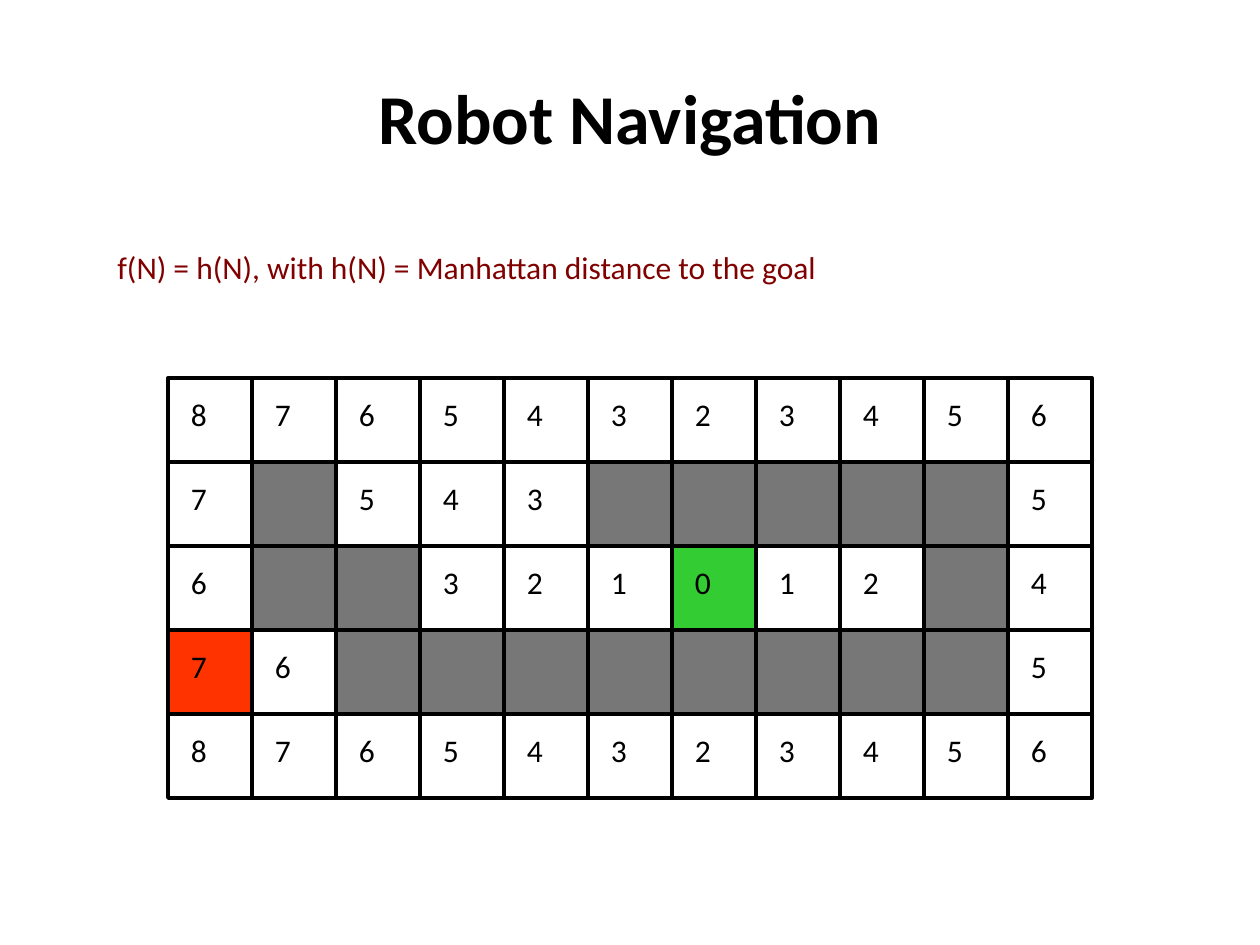
from dataclasses import dataclass

from lxml.etree import SubElement
from pptx import Presentation
from pptx.dml.color import RGBColor as RGB
from pptx.enum.shapes import MSO_CONNECTOR as Connector, MSO_SHAPE as Shape
from pptx.enum.text import MSO_ANCHOR as Anchor, PP_ALIGN as Align
from pptx.oxml.ns import qn
from pptx.util import Pt


@dataclass(frozen=True)
class Theme:
    font: str = "Calibri"
    title_size: int = 40
    body_size: int = 18
    line_width: float = 2.25
    ink: RGB = RGB(0x00, 0x00, 0x00)
    formula: RGB = RGB(0x80, 0x00, 0x00)
    wall: RGB = RGB(0x77, 0x77, 0x77)
    start: RGB = RGB(0xFF, 0x33, 0x00)
    goal: RGB = RGB(0x33, 0xCC, 0x33)


THEME = Theme()

# Map: distance to the goal in each free cell, "#" for a wall
DISTANCES = [
    "87654323456",
    "7#543#####5",
    "6##321012#4",
    "76########5",
    "87654323456",
]
START, GOAL = (3, 0), (2, 6)
ROWS, COLUMNS = len(DISTANCES), len(DISTANCES[0])

# Grid geometry in points
LEFT, TOP, CELL = 96, 216, 48
RIGHT, BOTTOM = LEFT + COLUMNS * CELL, TOP + ROWS * CELL
LABEL_INSET, LABEL_WIDTH, LABEL_HEIGHT = 6, 27, 36


def add_text(shapes, text, left, top, width, height, *, size=THEME.body_size,
             color=THEME.ink, bold=False, align=Align.LEFT, anchor=Anchor.TOP):
    shape = shapes.add_textbox(Pt(left), Pt(top), Pt(width), Pt(height))
    frame = shape.text_frame
    frame.word_wrap = True
    frame.vertical_anchor = anchor
    paragraph = frame.paragraphs[0]
    paragraph.alignment = align
    run = paragraph.add_run()
    run.text = text
    run.font.name = THEME.font
    run.font.size = Pt(size)
    run.font.bold = bold
    run.font.color.rgb = color


def set_line(shape):
    shape.line.color.rgb = THEME.ink
    shape.line.width = Pt(THEME.line_width)


def add_rectangle(shapes, left, top, width, height, fill=None):
    shape = shapes.add_shape(Shape.RECTANGLE, Pt(left), Pt(top), Pt(width), Pt(height))
    shape.shadow.inherit = False
    if fill is None:
        shape.fill.background()
    else:
        shape.fill.solid()
        shape.fill.fore_color.rgb = fill
    set_line(shape)


def add_line(shapes, x1, y1, x2, y2):
    line = shapes.add_connector(Connector.STRAIGHT, Pt(x1), Pt(y1), Pt(x2), Pt(y2))
    set_line(line)
    SubElement(line.element.spPr, qn("a:effectLst"))


def cell_fill(position, value):
    if value == "#":
        return THEME.wall
    return {START: THEME.start, GOAL: THEME.goal}.get(position)


def add_grid(shapes):
    # Frame and inner lines
    add_rectangle(shapes, LEFT, TOP, RIGHT - LEFT, BOTTOM - TOP)
    for column in range(1, COLUMNS):
        x = LEFT + column * CELL
        add_line(shapes, x, TOP, x, BOTTOM)
    for row in range(1, ROWS):
        y = TOP + row * CELL
        add_line(shapes, LEFT, y, RIGHT, y)

    # Coloured cells and distances
    for row, values in enumerate(DISTANCES):
        for column, value in enumerate(values):
            x, y = LEFT + column * CELL, TOP + row * CELL
            fill = cell_fill((row, column), value)
            if fill is not None:
                add_rectangle(shapes, x, y, CELL, CELL, fill)
            if value != "#":
                add_text(shapes, value, x + LABEL_INSET, y + LABEL_INSET,
                         LABEL_WIDTH, LABEL_HEIGHT)


def main():
    presentation = Presentation()
    presentation.slide_width, presentation.slide_height = Pt(720), Pt(540)
    slide = presentation.slides.add_slide(presentation.slide_layouts[6])

    # Heading and formula
    add_text(slide.shapes, "Robot Navigation", 36, 21.6, 648, 90,
             size=THEME.title_size, bold=True, align=Align.CENTER, anchor=Anchor.MIDDLE)
    add_text(slide.shapes, "f(N) = h(N), with h(N) = Manhattan distance to the goal",
             60, 138, 613.5, 36, color=THEME.formula)

    # Navigation map
    add_grid(slide.shapes.add_group_shape().shapes)

    presentation.save("out.pptx")


if __name__ == "__main__":
    main()
